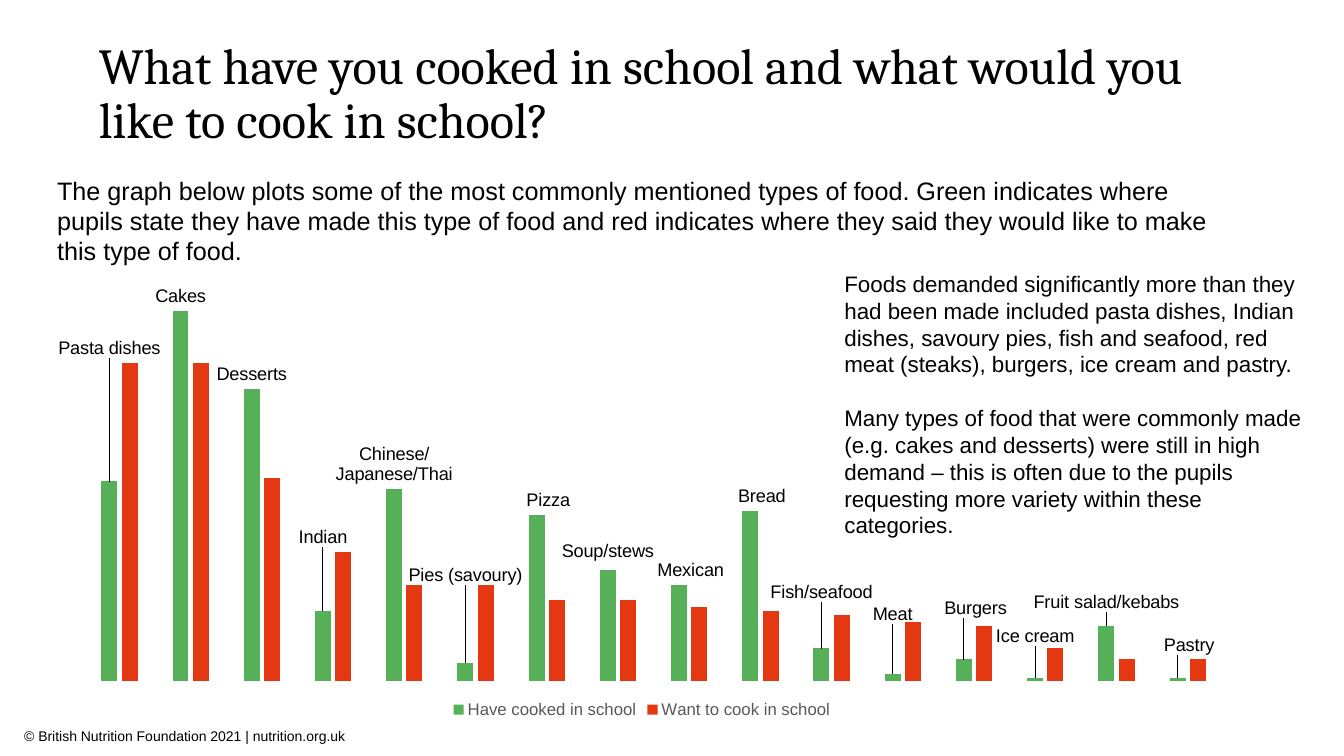
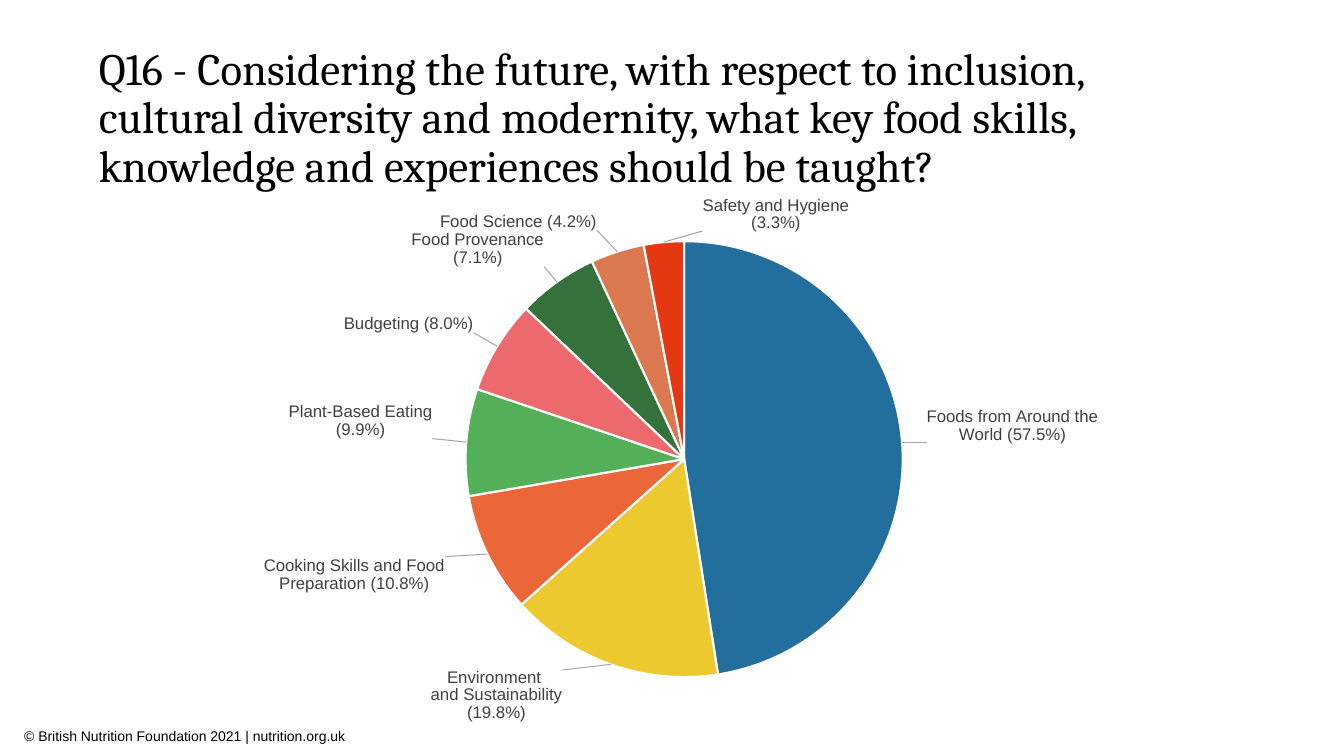
from dataclasses import dataclass
from typing import Optional

import pptx
import pptx.chart.data
import pptx.dml.color
import pptx.enum.chart
import pptx.enum.text
import pptx.util
from lxml import etree


@dataclass(frozen=True)
class Theme:
    ink: str = "000000"
    legend_ink: str = "595959"
    pie_label_ink: str = "404040"
    leader_line: str = "A6A6A6"
    paper: str = "FFFFFF"
    cooked: str = "56B058"
    wanted: str = "E43812"
    slices: tuple[str, ...] = ("226E9D", "EBC92F", "EB6739", "53B058",
                               "EC6A6D", "34713B", "DB7850", "E53812")
    title_font: str = "Cambria"
    body_font: str = "Arial"
    title_size: float = 36
    long_title_size: float = 32
    intro_size: float = 18
    comment_size: float = 16
    bar_label_size: float = 13
    legend_size: float = 12
    pie_label_size: float = 12
    chart_size: float = 10
    footer_size: float = 10


@dataclass(frozen=True)
class Box:
    """A rectangle in centimetres."""
    left: float
    top: float
    width: float
    height: float

    def lengths(self) -> tuple[pptx.util.Cm, ...]:
        return tuple(map(pptx.util.Cm, (self.left, self.top, self.width, self.height)))


@dataclass(frozen=True)
class Food:
    name: str
    cooked: int
    wanted: int
    shift: tuple[float, float]  # label offset, as parts of the chart size
    label: Optional[str] = None


@dataclass(frozen=True)
class Skill:
    name: str
    share: int
    shift: tuple[float, float]
    label: Optional[str] = None


THEME = Theme()
FOOTER = "© British Nutrition Foundation 2021 | nutrition.org.uk"
INTRO = ("The graph below plots some of the most commonly mentioned types of food. "
         "Green indicates where pupils state they have made this type of food and red "
         "indicates where they said they would like to make this type of food.")
COMMENTS = (
    "Foods demanded significantly more than they had been made included pasta dishes, "
    "Indian dishes, savoury pies, fish and seafood, red meat (steaks), burgers, ice cream "
    "and pastry.",
    "Many types of food that were commonly made (e.g. cakes and desserts) were still in "
    "high demand – this is often due to the pupils requesting more variety within these "
    "categories.",
)
FOODS = (
    Food("Pasta dishes", 54, 86, (0, -0.26)),
    Food("Cakes", 100, 86, (0, 0)),
    Food("Desserts", 79, 55, (0, 0)),
    Food("Indian", 19, 35, (0, -0.13)),
    Food("Chinese/Japanese/Thai", 52, 26, (0, 0), "Chinese/\nJapanese/Thai"),
    Food("Pies (savoury)", 5, 26, (0, -0.16)),
    Food("Pizza", 45, 22, (0.01, 0)),
    Food("Soup/stews", 30, 22, (0, -0.01)),
    Food("Mexican", 26, 20, (0.01, 0)),
    Food("Bread", 46, 19, (0.01, 0)),
    Food("Fish/seafood", 9, 18, (0, -0.09)),
    Food("Meat", 2, 16, (0, -0.1)),
    Food("Burgers", 6, 15, (0.01, -0.08)),
    Food("Ice cream", 1, 9, (0, -0.06)),
    Food("Fruit salad/kebabs", 15, 6, (0, -0.02), "Fruit salad/kebabs"),
    Food("Pastry", 1, 6, (0.01, -0.04)),
)
SKILLS = (
    Skill("Foods from Around the World (57.5%)", 48, (0.02, -0.03)),
    Skill("Environment \nand Sustainability (19.8%)", 16, (-0.05, 0)),
    Skill("Cooking Skills and Food Preparation (10.8%)", 9, (-0.04, 0)),
    Skill("Plant-Based Eating (9.9%)", 8, (-0.03, -0.04)),
    Skill("Budgeting (8.0%)", 7, (-0.02, -0.02)),
    Skill("Food Provenance (7.1%)", 6, (-0.01, -0.02)),
    Skill("Food Science (4.2%)", 4, (-0.02, -0.03)),
    Skill("Safety and Hygiene (3.3%)", 3, (0.2, -0.01)),
)


def rgb(colour: str) -> pptx.dml.color.RGBColor:
    return pptx.dml.color.RGBColor.from_string(colour)


def style_font(font, size: float, colour: str = THEME.ink, name: str = THEME.body_font) -> None:
    font.size, font.name, font.bold = pptx.util.Pt(size), name, False
    font.color.rgb = rgb(colour)


def add_text(slide, box: Box, paragraphs: tuple[str, ...], size: float,
             name: str = THEME.body_font, gap: float = 0):
    frame = slide.shapes.add_textbox(*box.lengths()).text_frame
    frame.word_wrap = True
    for index, text in enumerate(paragraphs):
        paragraph = frame.paragraphs[0] if index == 0 else frame.add_paragraph()
        paragraph.text = text
        style_font(paragraph.font, size, name=name)
        if index:
            paragraph.space_before = pptx.util.Pt(gap)
    return frame


def add_page(presentation, title: str, title_box: Box, title_size: float):
    """Add a blank slide with the shared title style and footer."""
    slide = presentation.slides.add_slide(presentation.slide_layouts[6])
    add_text(slide, Box(0.36, 18.21, 9.7, 1.45), (FOOTER,), THEME.footer_size)
    frame = add_text(slide, title_box, (title,), title_size, THEME.title_font)
    frame.vertical_anchor = pptx.enum.text.MSO_ANCHOR.BOTTOM
    frame.paragraphs[0].line_spacing = 0.9
    return slide


def chart_element(parent, tag: str, **attributes: str):
    namespace = parent.nsmap["c"]
    return etree.SubElement(parent, f"{{{namespace}}}{tag}", attributes)


def add_layout(parent, position: int, **values) -> None:
    """Give a chart part a manual layout, as its child at the given position."""
    for old in parent.xpath("c:layout"):
        parent.remove(old)
    layout = chart_element(parent, "layout")
    manual = chart_element(layout, "manualLayout")
    for tag, value in values.items():
        chart_element(manual, tag, val=str(value))
    parent.insert(position, layout)


def set_plot_area(chart, left: float, top: float, width: float, height: float) -> None:
    plot_area = chart._chartSpace.xpath("c:chart/c:plotArea")[0]
    add_layout(plot_area, 0, layoutTarget="inner", xMode="edge", yMode="edge",
               x=left, y=top, w=width, h=height)


def label_categories(series, size: float, colour: str, items) -> None:
    """Show category names beyond the points, each moved by its own shift."""
    outside = pptx.enum.chart.XL_LABEL_POSITION.OUTSIDE_END
    labels = series.data_labels
    labels.show_value, labels.show_category_name = False, True
    labels.position = outside
    style_font(labels.font, size, colour)
    for index, item in enumerate(items):
        label = series.points[index].data_label
        if item.label:
            label.text_frame.text = item.label
            for paragraph in label.text_frame.paragraphs:
                style_font(paragraph.font, size, colour)
        else:
            style_font(label.font, size, colour)
        label.position = outside
        element = series._element.xpath(f"c:dLbls/c:dLbl[c:idx/@val='{index}']")[0]
        element.xpath("c:showVal")[0].set("val", "0")
        element.xpath("c:showCatName")[0].set("val", "1")
        add_layout(element, 1, x=item.shift[0], y=item.shift[1])


def clear_leader_lines(series):
    labels = series._element.xpath("c:dLbls")[0]
    for old in labels.xpath("c:showLeaderLines | c:leaderLines"):
        labels.remove(old)
    return labels


def hide_leader_lines(series) -> None:
    """Switch leader lines off; column charts keep the switch in an extension."""
    extensions = chart_element(clear_leader_lines(series), "extLst")
    extension = chart_element(extensions, "ext", uri="{CE6537A1-D6FC-4f65-9D91-7224C49458BB}")
    namespace = "http://schemas.microsoft.com/office/drawing/2012/chart"
    etree.SubElement(extension, f"{{{namespace}}}showLeaderLines",
                     {"val": "0"}, nsmap={"c15": namespace})


def show_leader_lines(series) -> None:
    labels = clear_leader_lines(series)
    chart_element(labels, "showLeaderLines", val="1")
    shape = chart_element(chart_element(labels, "leaderLines"), "spPr")
    drawing = "{http://schemas.openxmlformats.org/drawingml/2006/main}"
    line = etree.SubElement(shape, drawing + "ln", w="9525")
    fill = etree.SubElement(line, drawing + "solidFill")
    etree.SubElement(fill, drawing + "srgbClr", val=THEME.leader_line)


def add_chart(slide, kind, box: Box, categories: list[str], series: dict[str, list[int]]):
    data = pptx.chart.data.CategoryChartData(number_format="0")
    data.categories = categories
    for name, values in series.items():
        data.add_series(name, values)
    chart = slide.shapes.add_chart(kind, *box.lengths(), data).chart
    style_font(chart.font, THEME.chart_size)
    chart.has_title = False
    return chart


def add_food_chart(slide) -> None:
    chart = add_chart(
        slide, pptx.enum.chart.XL_CHART_TYPE.COLUMN_CLUSTERED, Box(1.47, 6.68, 29.36, 11.53),
        [food.name for food in FOODS],
        {"Have cooked in school": [food.cooked for food in FOODS],
         "Want to cook in school": [food.wanted for food in FOODS]})
    set_plot_area(chart, 0.02, 0.04, 0.98, 0.87)
    chart.category_axis.visible = chart.value_axis.visible = False
    chart.value_axis.has_major_gridlines = False
    chart.value_axis.minimum_scale, chart.value_axis.maximum_scale = 0, 107.5
    chart.has_legend = True
    chart.legend.position = pptx.enum.chart.XL_LEGEND_POSITION.BOTTOM
    chart.legend.include_in_layout = False
    style_font(chart.legend.font, THEME.legend_size, THEME.legend_ink)
    plot = chart.plots[0]
    plot.gap_width, plot.overlap, plot.vary_by_categories = 219, -27, False
    for series, colour in zip(plot.series, (THEME.cooked, THEME.wanted)):
        series.format.fill.solid()
        series.format.fill.fore_color.rgb = rgb(colour)
    label_categories(plot.series[0], THEME.bar_label_size, THEME.ink, FOODS)
    hide_leader_lines(plot.series[0])


def add_skill_chart(slide) -> None:
    chart = add_chart(
        slide, pptx.enum.chart.XL_CHART_TYPE.PIE, Box(5.64, 4.95, 23.44, 13.28),
        [skill.name for skill in SKILLS], {"": [skill.share for skill in SKILLS]})
    set_plot_area(chart, 0.26, 0.07, 0.47, 0.86)
    chart.has_legend = False
    chart.plots[0].vary_by_categories = True
    series = chart.plots[0].series[0]
    for index, colour in enumerate(THEME.slices):
        point = series.points[index].format
        point.fill.solid()
        point.fill.fore_color.rgb = rgb(colour)
        point.line.color.rgb = rgb(THEME.paper)
        point.line.width = pptx.util.Pt(1.5)
    label_categories(series, THEME.pie_label_size, THEME.pie_label_ink, SKILLS)
    show_leader_lines(series)


def main() -> None:
    presentation = pptx.Presentation()
    presentation.slide_width = pptx.util.Cm(33.87)
    presentation.slide_height = pptx.util.Cm(19.05)

    foods = add_page(
        presentation, "What have you cooked in school and what would you like to cook in school?",
        Box(2.24, 1.96, 29.41, 1.93), THEME.title_size)
    add_food_chart(foods)
    add_text(foods, Box(1.19, 4.29, 29.92, 2.57), (INTRO,), THEME.intro_size)
    add_text(foods, Box(21.03, 6.68, 12.07, 7.09), COMMENTS, THEME.comment_size, gap=19)

    skills = add_page(
        presentation, "Q16 - Considering the future, with respect to inclusion, cultural diversity "
        "and modernity, what key food skills, knowledge and experiences should be taught?",
        Box(2.24, 1.96, 28.5, 3), THEME.long_title_size)
    add_skill_chart(skills)
    presentation.save("out.pptx")


if __name__ == "__main__":
    main()
